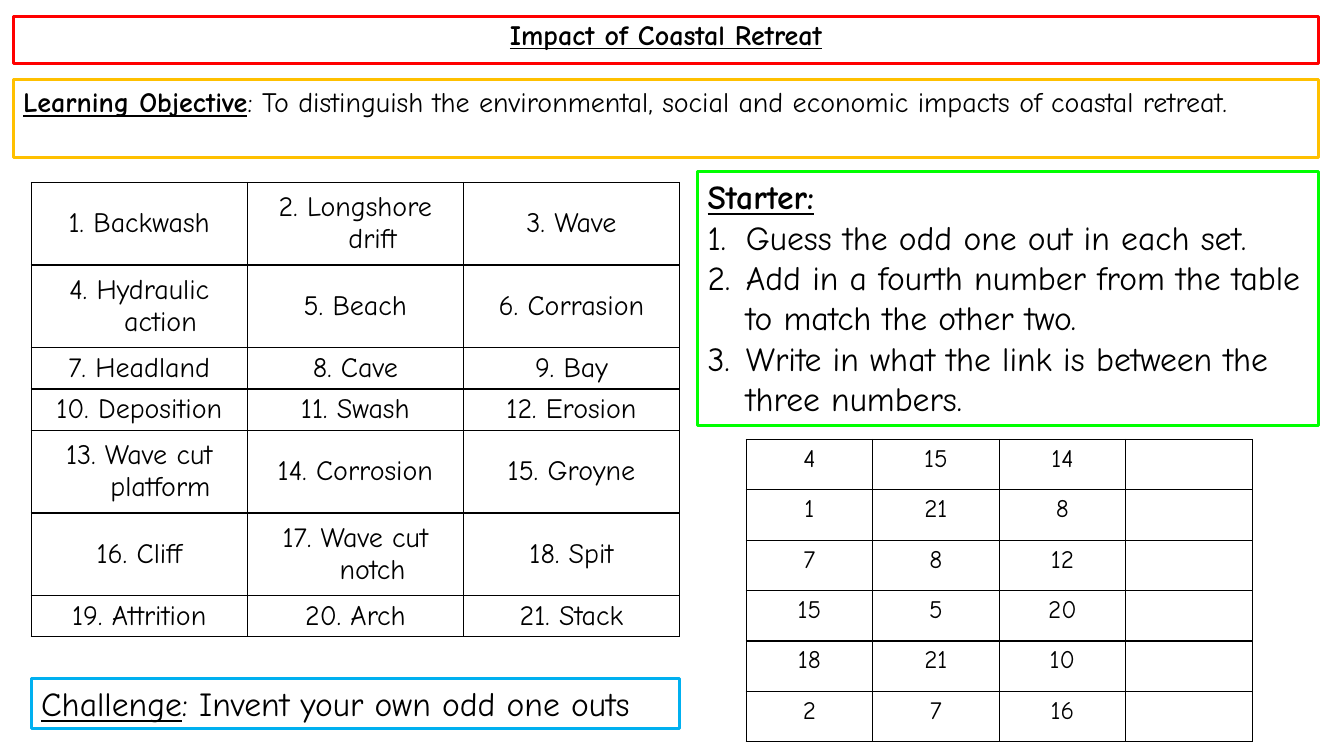
from lxml import etree
from pptx import Presentation
from pptx.dml.color import RGBColor
from pptx.enum.shapes import MSO_SHAPE as SHAPE
from pptx.enum.text import MSO_ANCHOR as ANCHOR, PP_ALIGN as ALIGN
from pptx.oxml.ns import qn
from pptx.util import Inches, Pt

BLACK = RGBColor(0, 0, 0)
RED = RGBColor(0xFF, 0, 0)
AMBER = RGBColor(0xFF, 0xC0, 0)
GREEN = RGBColor(0, 0xFF, 0)
BLUE = RGBColor(0, 0xB0, 0xF0)
FONT = "Comic Neue"

KEYWORDS = [
    ["Backwash", "Longshore drift", "Wave"],
    ["Hydraulic action", "Beach", "Corrasion"],
    ["Headland", "Cave", "Bay"],
    ["Deposition", "Swash", "Erosion"],
    ["Wave cut platform", "Corrosion", "Groyne"],
    ["Cliff", "Wave cut notch", "Spit"],
    ["Attrition", "Arch", "Stack"],
]
KEYWORD_HEIGHTS = [0.82, 0.82, 0.41, 0.41, 0.82, 0.82, 0.41]
KEYWORD_INDENTS = [0.42, 0.34, 0.26]
ODD_ONE_OUT = [
    [4, 15, 14],
    [1, 21, 8],
    [7, 8, 12],
    [15, 5, 20],
    [18, 21, 10],
    [2, 7, 16],
]
STARTER_STEPS = [
    "Guess the odd one out in each set.",
    "Add in a fourth number from the table to match the other two.",
    "Write in what the link is between the three numbers.",
]


def add_text(p, text, size=20, bold=False, underline=False, align=ALIGN.LEFT):
    p.alignment = align
    r = p.add_run()
    r.text = text
    r.font.name = FONT
    r.font.size = Pt(size)
    r.font.bold = bold
    r.font.underline = underline
    r.font.color.rgb = BLACK


def hang(p, indent):
    pPr = p._p.get_or_add_pPr()
    pPr.set("marL", str(Inches(indent)))
    pPr.set("indent", str(-Inches(indent)))
    return pPr


def number(p):
    etree.SubElement(hang(p, 0.38), qn("a:buAutoNum"), type="arabicPeriod")


def add_frame(s, color, left, top, width, height):
    sp = s.shapes.add_shape(SHAPE.RECTANGLE, Inches(left), Inches(top),
                            Inches(width), Inches(height))
    sp.shadow.inherit = False
    sp.fill.background()
    sp.line.color.rgb = color
    sp.line.width = Pt(2.25)
    tf = sp.text_frame
    tf.word_wrap = True
    tf.vertical_anchor = ANCHOR.TOP
    return tf


def add_borders(cell):
    tcPr = cell._tc.get_or_add_tcPr()
    for side in ("lnL", "lnR", "lnT", "lnB"):
        ln = etree.SubElement(tcPr, qn(f"a:{side}"), w=str(Pt(1)))
        fill = etree.SubElement(ln, qn("a:solidFill"))
        etree.SubElement(fill, qn("a:srgbClr"), val=str(BLACK))


def add_grid(s, left, top, width, heights, columns):
    table = s.shapes.add_table(len(heights), columns, Inches(left), Inches(top),
                               Inches(width), Inches(sum(heights))).table
    table.first_row = table.horz_banding = False
    for row, height in zip(table.rows, heights):
        row.height = Inches(height)
    for cell in table.iter_cells():
        add_borders(cell)
        cell.fill.background()
    return table


def add_keywords(s):
    table = add_grid(s, 0.31, 1.81, 6.43, KEYWORD_HEIGHTS, 3)
    for i, words in enumerate(KEYWORDS):
        for j, word in enumerate(words):
            cell = table.cell(i, j)
            cell.vertical_anchor = ANCHOR.MIDDLE
            cell.margin_left = cell.margin_right = Inches(0.07)
            cell.margin_top = cell.margin_bottom = 0
            p = cell.text_frame.paragraphs[0]
            hang(p, KEYWORD_INDENTS[j])
            add_text(p, f"{3 * i + j + 1}. {word}", align=ALIGN.CENTER)


def add_number_sets(s):
    table = add_grid(s, 7.4, 4.36, 5.02, [0.5] * len(ODD_ONE_OUT), 4)
    for i, values in enumerate(ODD_ONE_OUT):
        for j, value in enumerate(values):
            p = table.cell(i, j).text_frame.paragraphs[0]
            add_text(p, str(value), size=18, align=ALIGN.CENTER)


def add_starter(s):
    tf = add_frame(s, GREEN, 6.92, 1.7, 6.16, 2.52)
    add_text(tf.paragraphs[0], "Starter:", size=24, bold=True, underline=True)
    for step in STARTER_STEPS:
        p = tf.add_paragraph()
        number(p)
        add_text(p, step, size=24)


def main():
    prs = Presentation()
    prs.slide_width, prs.slide_height = Inches(13.33), Inches(7.5)
    s = prs.slides.add_slide(prs.slide_layouts[6])

    p = add_frame(s, RED, 0.13, 0.16, 12.95, 0.47).paragraphs[0]
    p.line_spacing = 0.9
    add_text(p, "Impact of Coastal Retreat", bold=True, underline=True,
             align=ALIGN.CENTER)

    p = add_frame(s, AMBER, 0.13, 0.79, 12.95, 0.77).paragraphs[0]
    add_text(p, "Learning Objective", bold=True, underline=True)
    add_text(p, ": To distinguish the environmental, social and economic "
                "impacts of coastal retreat.")

    add_keywords(s)
    add_starter(s)
    add_number_sets(s)

    p = add_frame(s, BLUE, 0.31, 6.73, 6.43, 0.5).paragraphs[0]
    add_text(p, "Challenge", size=24, underline=True)
    add_text(p, ": Invent your own odd one outs", size=24)

    prs.save("out.pptx")


if __name__ == "__main__":
    main()
